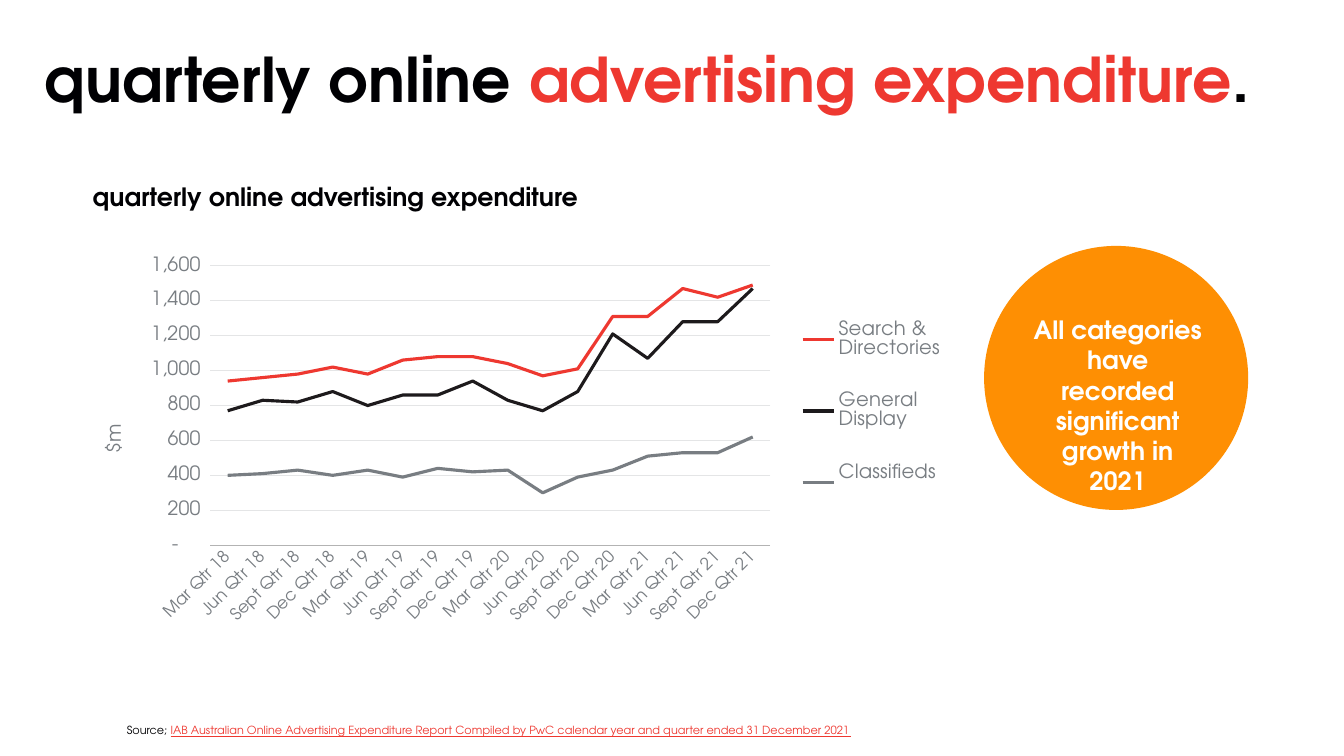
import pptx
import pptx.chart.data
import pptx.dml.color
import pptx.enum.chart
import pptx.enum.shapes
import pptx.enum.text
import pptx.oxml
import pptx.oxml.ns
import pptx.util

FACE = "TeX Gyre Adventor"
INK, RED, GREY, WHITE, ORANGE = "000003", "EE3830", "787D82", "FFFFFF", "FE8F03"
BLACK_LINE, AXIS_LINE, GRID_LINE = "1D1A1C", "B3B3B3", "E4E5E6"

deck = pptx.Presentation()
deck.slide_width = pptx.util.Inches(13.33)
deck.slide_height = pptx.util.Inches(7.5)
page = deck.slides.add_slide(deck.slide_layouts[5])
color = pptx.dml.color.RGBColor.from_string


def area(left, top, width, height):
    """Turn percentages of the slide into lengths."""
    sides = (deck.slide_width, deck.slide_height) * 2
    return [int(side * share / 100) for side, share in zip(sides, (left, top, width, height))]


def set_layout(element, index, **shares):
    """Place a chart part by shares of the chart's size."""
    for old in element.findall(pptx.oxml.ns.qn("c:layout")):
        element.remove(old)
    inner = '<c:layoutTarget val="inner"/>' if index == 0 else ""
    modes = "".join(f'<c:{side}Mode val="edge"/>' for side in "xy")
    sizes = "".join(f'<c:{name} val="{share}"/>' for name, share in shares.items())
    element.insert(index, pptx.oxml.parse_xml(
        f'<c:layout {pptx.oxml.ns.nsdecls("c")}><c:manualLayout>'
        f"{inner}{modes}{sizes}</c:manualLayout></c:layout>"))


# Circle behind the message
circle = page.shapes.add_shape(
    pptx.enum.shapes.MSO_SHAPE.OVAL, *area(73.22, 32.53, 19.65, 34.93))
circle.shadow.inherit = False
circle.fill.solid()
circle.fill.fore_color.rgb = color(ORANGE)
circle.line.fill.background()

# Title placeholder
title = page.shapes.title
title.left, title.top, title.width, title.height = area(2.55, 4.53, 96.7, 12.8)

# Texts: box, size, bold, alignment, spans of wording and colour
left, center = pptx.enum.text.PP_ALIGN.LEFT, pptx.enum.text.PP_ALIGN.CENTER
heading = page.shapes.add_textbox(*area(6.15, 23.33, 51.09, 5.33))
message = page.shapes.add_textbox(*area(75.92, 40.93, 14.48, 25.33))
source = page.shapes.add_textbox(*area(8.7, 95.07, 81.47, 3.2))
texts = [
    (title, 44, True, left,
     [("quarterly online ", INK), ("advertising expenditure", RED), (".", INK)]),
    (heading, 18, True, left, [("quarterly online advertising expenditure", INK)]),
    (message, 18, True, center,
     [("All categories have recorded significant growth in 2021", WHITE)]),
    (source, 8, False, left,
     [("Source; ", INK),
      ("IAB Australian Online Advertising Expenditure Report Compiled by PwC "
       "calendar year and quarter ended 31 December 2021", RED)]),
]
for box, size, bold, alignment, spans in texts:
    box.text_frame.word_wrap = True
    para = box.text_frame.paragraphs[0]
    para.alignment = alignment
    for wording, shade in spans:
        span = para.add_run()
        span.text = wording
        span.font.name = FACE
        span.font.size = pptx.util.Pt(size)
        span.font.bold = bold
        span.font.color.rgb = color(shade)
title.text_frame.vertical_anchor = pptx.enum.text.MSO_ANCHOR.MIDDLE
title.text_frame.paragraphs[0].line_spacing = 0.9
source.text_frame.paragraphs[0].runs[1].font.underline = True

# Chart data: four quarters a year from 2018 to 2021
data = pptx.chart.data.CategoryChartData()
data.categories = [f"{month} Qtr {year}" for year in range(18, 22)
                   for month in ("Mar", "Jun", "Sept", "Dec")]
spending = [
    ("Search & Directories", RED,
     [940, 960, 980, 1020, 980, 1060, 1080, 1080,
      1040, 970, 1010, 1310, 1310, 1470, 1420, 1490]),
    ("General Display", BLACK_LINE,
     [770, 830, 820, 880, 800, 860, 860, 940,
      830, 770, 880, 1210, 1070, 1280, 1280, 1470]),
    ("Classifieds", GREY,
     [400, 410, 430, 400, 430, 390, 440, 420,
      430, 300, 390, 430, 510, 530, 530, 620]),
]
for name, shade, values in spending:
    data.add_series(name, values)

# Line chart
chart = page.shapes.add_chart(
    pptx.enum.chart.XL_CHART_TYPE.LINE, *area(6.15, 32.53, 65.94, 54.93), data).chart
chart.has_title = False
chart.font.name = FACE
chart.font.size = pptx.util.Pt(10)
chart.font.color.rgb = color(INK)
for series, (name, shade, values) in zip(chart.plots[0].series, spending):
    series.smooth = False
    series.marker.style = pptx.enum.chart.XL_MARKER_STYLE.NONE
    series.format.line.color.rgb = color(shade)
    series.format.line.width = pptx.util.Pt(2.25)

# Axes
months, money = chart.category_axis, chart.value_axis
for axis in (months, money):
    axis.major_tick_mark = axis.minor_tick_mark = pptx.enum.chart.XL_TICK_MARK.NONE
months.format.line.color.rgb = color(AXIS_LINE)
months.format.line.width = pptx.util.Pt(0.75)
money.format.line.fill.background()
money.minimum_scale, money.maximum_scale, money.major_unit = 0, 1600, 200
money.major_gridlines.format.line.color.rgb = color(GRID_LINE)
money.major_gridlines.format.line.width = pptx.util.Pt(0.75)
money.tick_labels.number_format = r'_-* #,##0_-;\-* #,##0_-;_-* "-"??_-;_-@_'
money.tick_labels.number_format_is_linked = False
money.axis_title.text_frame.text = "$m"

# Legend
chart.has_legend = True
chart.legend.position = pptx.enum.chart.XL_LEGEND_POSITION.RIGHT
chart.legend.include_in_layout = False

# Grey chart text
unit = money.axis_title.text_frame.paragraphs[0].runs[0]
unit.font.bold = False
for font, size in ((months.tick_labels.font, 12), (money.tick_labels.font, 14),
                   (chart.legend.font, 14), (unit.font, 14)):
    font.name = FACE
    font.size = pptx.util.Pt(size)
    font.color.rgb = color(GREY)

# Text rotation and placing of the chart parts
money_title = money.axis_title._element
for element, turn in ((months._element.find(pptx.oxml.ns.qn("c:txPr")), -45),
                      (money_title.find(".//" + pptx.oxml.ns.qn("c:rich")), -90)):
    body = element.find(pptx.oxml.ns.qn("a:bodyPr"))
    body.set("rot", str(turn * 60000))
    body.set("vert", "horz")
plot_area = chart._chartSpace.find(".//" + pptx.oxml.ns.qn("c:plotArea"))
set_layout(plot_area, 0, x=0.144, y=0.048, w=0.632, h=0.673)
set_layout(chart.legend._element, 1, x=0.8, y=0.1, w=0.18, h=0.55)
set_layout(money_title, 1, x=0.02, y=0.42)

deck.save("out.pptx")
